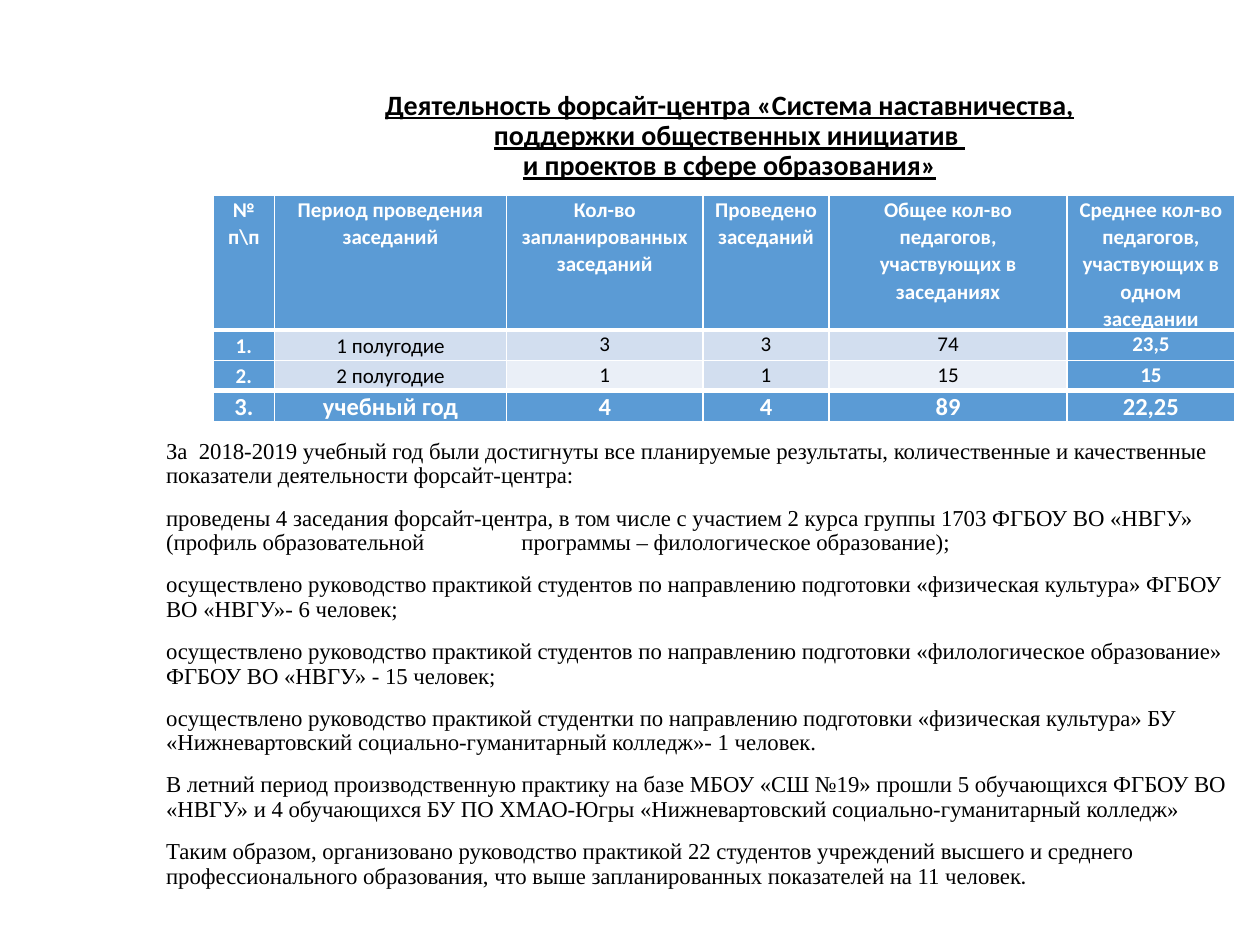
import dataclasses
import typing

import lxml.etree
import pptx
import pptx.dml.color
import pptx.enum.text
import pptx.oxml.ns
import pptx.util

Inches = pptx.util.Inches
Pt = pptx.util.Pt
ALIGN = pptx.enum.text.PP_ALIGN
ANCHOR = pptx.enum.text.MSO_ANCHOR

WHITE, BLACK = "FFFFFF", "000000"
BLUE, PALE, LIGHT = "5B9BD5", "D2DEEF", "EAEFF7"


@dataclasses.dataclass
class Style:
    size: float
    name: str = "Calibri"
    tint: str = BLACK
    bold: bool = False
    under: bool = False


@dataclasses.dataclass
class Row:
    texts: list[str]
    fills: list[str]
    high: float = 0.24
    size: float = 12
    top: float = 1
    base: float = 1


HEAD = Style(16, bold=True, under=True)
BODY = Style(13, "Times New Roman")
DOT = Style(13)

TITLE = ("Деятельность форсайт-центра «Система наставничества, "
         "поддержки общественных инициатив \vи проектов в сфере образования»")

WIDTHS = [0.49, 1.84, 1.56, 1, 1.89, 1.33]
ROWS = [
    Row(["№ п\\п", "Период проведения заседаний",
         "Кол-во запланированных заседаний", "Проведено заседаний",
         "Общее кол-во педагогов, участвующих в заседаниях",
         "Среднее кол-во педагогов, участвующих в одном заседании"],
        [BLUE] * 6, high=1.07, base=3),
    Row(["1.", "1 полугодие", "3", "3", "74", "23,5"],
        [BLUE] + [PALE] * 4 + [BLUE]),
    Row(["2.", "2 полугодие", "1", "1", "15", "15"],
        [BLUE, PALE, LIGHT, PALE, LIGHT, BLUE], base=3),
    Row(["3.", "учебный год", "4", "4", "89", "22,25"],
        [BLUE] * 6, size=14, top=3),
]

NOTES = [
    "За  2018-2019 учебный год были достигнуты все планируемые результаты, "
    "количественные и качественные показатели деятельности форсайт-центра:",
    "проведены 4 заседания форсайт-центра, в том числе с участием 2 курса "
    "группы 1703 ФГБОУ ВО «НВГУ» (профиль образовательной\t"
    "программы – филологическое образование);",
    "осуществлено руководство практикой студентов по направлению подготовки "
    "«физическая культура» ФГБОУ ВО «НВГУ»- 6 человек;",
    "осуществлено руководство практикой студентов по направлению подготовки "
    "«филологическое образование» ФГБОУ ВО «НВГУ» - 15 человек;",
    "осуществлено руководство практикой студентки по направлению подготовки "
    "«физическая культура» БУ «Нижневартовский социально-гуманитарный "
    "колледж»- 1 человек.",
    "В летний период производственную практику на базе МБОУ «СШ №19» прошли "
    "5 обучающихся ФГБОУ ВО «НВГУ» и 4 обучающихся БУ ПО ХМАО-Югры "
    "«Нижневартовский социально-гуманитарный колледж»",
    "Таким образом, организовано руководство практикой 22 студентов "
    "учреждений высшего и среднего профессионального образования, что выше "
    "запланированных показателей на 11 человек",
]


def color(code: str) -> pptx.dml.color.RGBColor:
    return pptx.dml.color.RGBColor.from_string(code)


def assign(item: typing.Any, values: dict[str, typing.Any]) -> None:
    for key, value in values.items():
        setattr(item, key, value)


def write(para: typing.Any, text: str, style: Style) -> None:
    """Add text to a paragraph, with line breaks at vertical tabs."""
    for index, part in enumerate(text.split("\v")):
        if index:
            para.add_line_break()
        run = para.add_run()
        run.text = part
        assign(run.font, {"size": Pt(style.size), "name": style.name,
                          "bold": style.bold, "underline": style.under})
        run.font.color.rgb = color(style.tint)


def add_box(slide: typing.Any, area: tuple[float, ...], anchor: ANCHOR) -> typing.Any:
    frame = slide.shapes.add_textbox(*map(Inches, area)).text_frame
    assign(frame, {"word_wrap": True, "vertical_anchor": anchor})
    return frame


def add_tab(para: typing.Any, place: float) -> None:
    tabs = lxml.etree.SubElement(para._p.get_or_add_pPr(), pptx.oxml.ns.qn("a:tabLst"))
    lxml.etree.SubElement(tabs, pptx.oxml.ns.qn("a:tab"), pos=str(Inches(place)), algn="l")


def add_edge(cell: typing.Any, side: str, width: float) -> None:
    tag = pptx.oxml.ns.qn
    line = lxml.etree.SubElement(cell._tc.get_or_add_tcPr(), tag(f"a:ln{side}"),
                                 w=str(Pt(width)))
    fill = lxml.etree.SubElement(line, tag("a:solidFill"))
    lxml.etree.SubElement(fill, tag("a:srgbClr"), val=WHITE)


def fill_cell(cell: typing.Any, text: str, fill: str, row: Row, mid: bool) -> None:
    for side, width in {"L": 1, "R": 1, "T": row.top, "B": row.base}.items():
        add_edge(cell, side, width)
    cell.fill.solid()
    cell.fill.fore_color.rgb = color(fill)
    assign(cell, {"margin_left": Inches(0.07), "margin_right": Inches(0.07),
                  "margin_top": 0, "margin_bottom": 0,
                  "vertical_anchor": ANCHOR.MIDDLE if mid else ANCHOR.TOP})
    para = cell.text_frame.paragraphs[0]
    assign(para, {"alignment": ALIGN.CENTER, "line_spacing": 1.07})
    dark = fill == BLUE
    write(para, text, Style(row.size, tint=WHITE if dark else BLACK, bold=dark))


def add_grid(slide: typing.Any) -> None:
    area = (1.69, 1.55, sum(WIDTHS), sum(row.high for row in ROWS))
    table = slide.shapes.add_table(len(ROWS), len(WIDTHS), *map(Inches, area)).table
    assign(table, {"first_row": False, "horz_banding": False})
    for column, width in zip(table.columns, WIDTHS):
        column.width = Inches(width)
    for y, row in enumerate(ROWS):
        table.rows[y].height = Inches(row.high)
        for x, (text, fill) in enumerate(zip(row.texts, row.fills)):
            fill_cell(table.cell(y, x), text, fill, row, mid=y > 0 and x < 2)


def main() -> None:
    deck = pptx.Presentation()
    assign(deck, {"slide_width": Inches(10), "slide_height": Inches(7.5)})
    slide = deck.slides.add_slide(deck.slide_layouts[6])

    # Title
    para = add_box(slide, (2.64, 0.21, 6.3, 1.28), ANCHOR.BOTTOM).paragraphs[0]
    assign(para, {"alignment": ALIGN.CENTER, "line_spacing": 0.9})
    write(para, TITLE, HEAD)

    # Results in prose
    frame = add_box(slide, (1.22, 3.44, 8.78, 4.33), ANCHOR.TOP)
    for index, text in enumerate(NOTES):
        para = frame.add_paragraph() if index else frame.paragraphs[0]
        if "\t" in text:
            add_tab(para, 2.82)
        assign(para, {"line_spacing": 0.9, "space_before": Pt(10 if index else 0)})
        write(para, text, BODY)
    write(para, ".", DOT)

    # Table of meetings
    add_grid(slide)

    deck.save("out.pptx")


if __name__ == "__main__":
    main()
